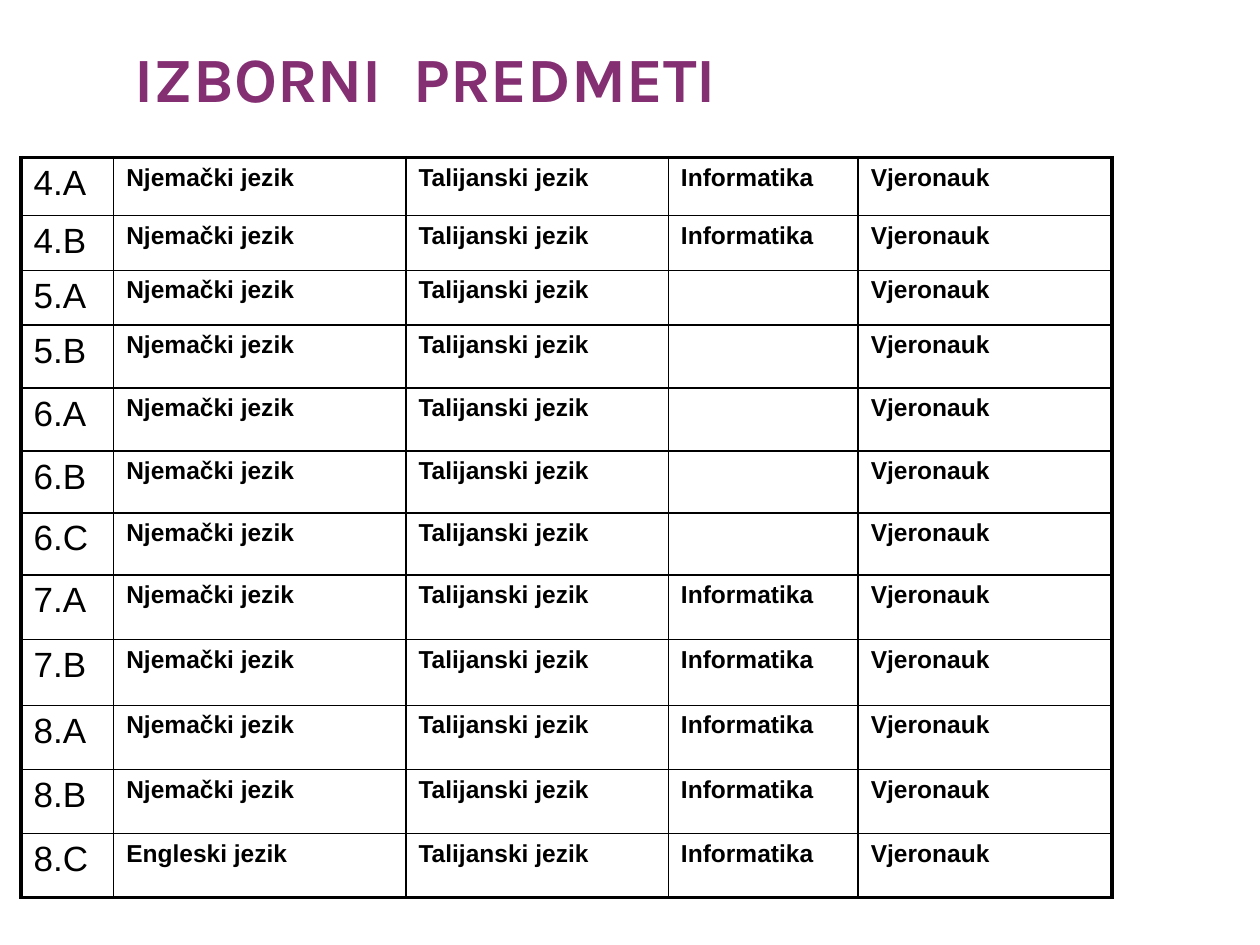
import pptx
import pptx.util
import pptx.dml.color
import pptx.enum.text
from lxml import etree

Pt = pptx.util.Pt

TITLE = "IZBORNI  PREDMETI"
CLASSES = ["4.A", "4.B", "5.A", "5.B", "6.A", "6.B",
           "6.C", "7.A", "7.B", "8.A", "8.B", "8.C"]
GERMAN, ENGLISH = "Njemački jezik", "Engleski jezik"
ITALIAN, COMPUTING, FAITH = "Talijanski jezik", "Informatika", "Vjeronauk"
NO_COMPUTING = {"5.A", "5.B", "6.A", "6.B", "6.C"}
ENGLISH_ONLY = {"8.C"}

COLORS = {"title": "852F73", "ink": "000000", "paper": "FFFFFF"}
FONTS = {
    "title": {"name": "Karla", "size": Pt(36), "bold": True},
    "class": {"name": "Arial", "size": Pt(20), "bold": False},
    "subject": {"name": "Arial", "size": Pt(14), "bold": True},
}
WIDTHS = [53, 167, 150, 108.5, 145]
HEIGHTS = [33.3, 30, 30, 36, 36, 35.4, 35.4, 37, 37.6, 36.6, 36.6, 36.6]
LEFT, TOP = 12, 90
THIN, THICK = 1, 2.25


def tint(key):
    return pptx.dml.color.RGBColor.from_string(COLORS[key])


def write(frame, text, style, color):
    para = frame.paragraphs[0]
    run = para.add_run()
    run.text = text
    for name, value in FONTS[style].items():
        setattr(run.font, name, value)
    run.font.color.rgb = tint(color)


def border(cell, sides):
    """Draw cell edges; sides maps an edge letter to its width in points."""
    props = cell._tc.get_or_add_tcPr()
    ns = pptx.oxml.ns.qn
    for spot, (side, width) in enumerate(sides.items()):
        line = etree.Element(ns("a:ln" + side), w=str(Pt(width)))
        fill = etree.SubElement(line, ns("a:solidFill"))
        etree.SubElement(fill, ns("a:srgbClr"), val=COLORS["ink"])
        props.insert(spot, line)


def subjects(group):
    first = ENGLISH if group in ENGLISH_ONLY else GERMAN
    third = "" if group in NO_COMPUTING else COMPUTING
    return [group, first, ITALIAN, third, FAITH]


def add_title(slide):
    box = slide.shapes.add_textbox(Pt(0), Pt(18), Pt(534), Pt(48))
    frame = box.text_frame
    layout = {"word_wrap": True, "margin_left": Pt(77), "margin_right": Pt(3.6),
              "margin_top": 0, "margin_bottom": 0,
              "vertical_anchor": pptx.enum.text.MSO_ANCHOR.BOTTOM}
    for name, value in layout.items():
        setattr(frame, name, value)
    write(frame, TITLE, "title", "title")


def add_grid(slide):
    rows, cols = len(CLASSES), len(WIDTHS)
    table = slide.shapes.add_table(rows, cols, Pt(LEFT), Pt(TOP),
                                   Pt(sum(WIDTHS)), Pt(sum(HEIGHTS))).table
    table.first_row = table.horz_banding = False
    for col, width in zip(table.columns, WIDTHS):
        col.width = Pt(width)
    for r, group in enumerate(CLASSES):
        table.rows[r].height = Pt(HEIGHTS[r])
        for c, text in enumerate(subjects(group)):
            cell = table.cell(r, c)
            cell.fill.solid()
            cell.fill.fore_color.rgb = tint("paper")
            outer = {"L": c == 0, "R": c == cols - 1,
                     "T": r == 0, "B": r == rows - 1}
            border(cell, {side: THICK if edge else THIN
                          for side, edge in outer.items()})
            if text:
                write(cell.text_frame, text, "subject" if c else "class", "ink")


def main():
    deck = pptx.Presentation()
    deck.slide_width, deck.slide_height = Pt(720), Pt(540)
    slide = deck.slides.add_slide(deck.slide_layouts[6])
    add_title(slide)
    add_grid(slide)
    deck.save("out.pptx")


if __name__ == "__main__":
    main()
